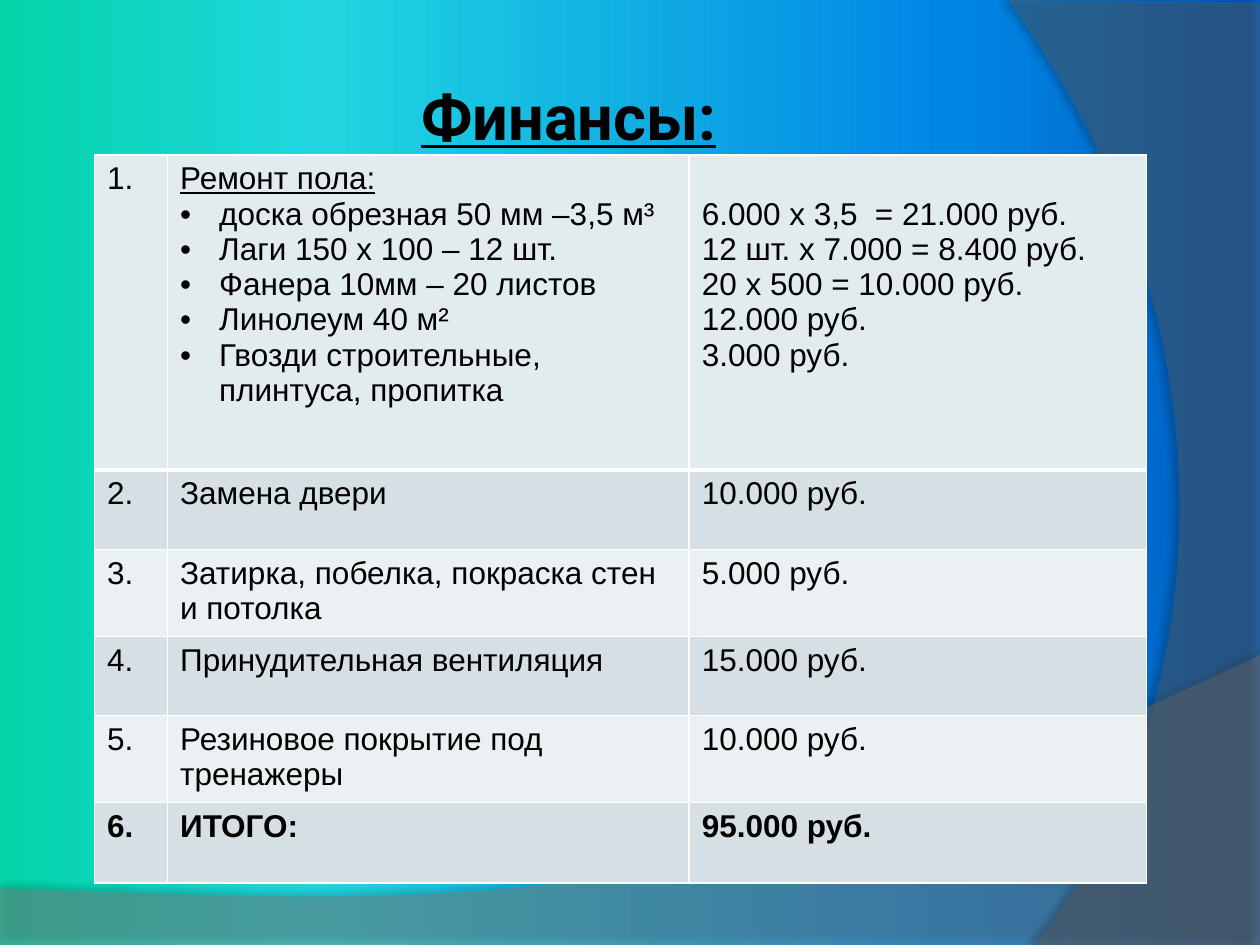
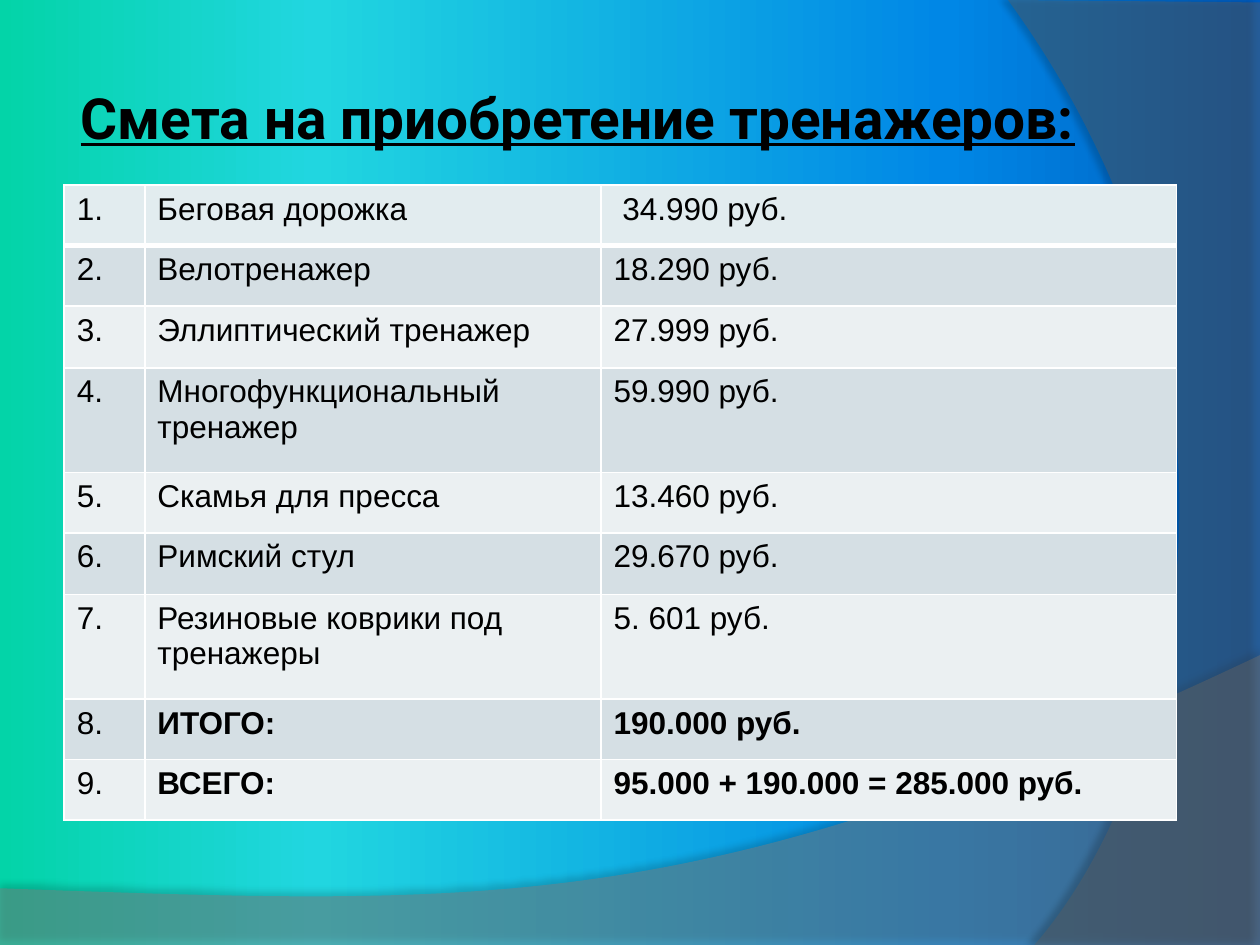
from copy import deepcopy

from lxml.etree import SubElement
from pptx import Presentation
from pptx.dml.color import RGBColor
from pptx.enum.text import MSO_ANCHOR, MSO_AUTO_SIZE, PP_ALIGN
from pptx.oxml.ns import qn
from pptx.util import Inches, Pt

BLACK = RGBColor(0x00, 0x00, 0x00)
WHITE = RGBColor(0xFF, 0xFF, 0xFF)
FIRST_ROW = RGBColor(0xE2, 0xEC, 0xEF)
EVEN_ROW = RGBColor(0xD5, 0xDF, 0xE4)
ODD_ROW = RGBColor(0xEB, 0xF0, 0xF2)
BOTTOM_GRAY = RGBColor(0x7F, 0x7F, 0x7F)
RIGHT_GRAY = RGBColor(0x5E, 0x5E, 0x5E)
GRADIENT = [
    (0, RGBColor(0x03, 0xD4, 0xA8)),
    (0.25, RGBColor(0x21, 0xD6, 0xE0)),
    (0.75, RGBColor(0x00, 0x87, 0xE6)),
    (1, RGBColor(0x00, 0x5C, 0xBF)),
]
TITLE_FONT, BODY_FONT, BODY_SIZE = "Roboto", "Arial", 18
LINE_HEIGHT = 0.28
BULLET_INDENT = 0.31

# Each wave: corner points, then a cubic curve that starts at the last corner.
WAVES = [
    {"color": BOTTOM_GRAY, "opacity": 45,
     "corners": [(0, 7.05), (0, 7.5), (10, 7.5), (10, 5.2)],
     "curve": [(5.59, 7.29), (3.91, 7.19), (0, 7.05)],
     "shadow": {"opacity": 35, "distance": 3.5, "angle": 270}},
    {"color": RIGHT_GRAY, "opacity": 40,
     "corners": [(10, 0.02), (10, 7.5), (8.21, 7.5)],
     "curve": [(9.35, 6.19), (10.18, 3), (8, 0)],
     "shadow": {"opacity": 45, "distance": 4, "angle": 180}},
]

# A row is (work or item, price); a list holds several paragraphs.
ESTIMATES = [
    {
        "title": "Финансы:", "title_size": 36, "title_at": (0.43, 0.29),
        "table_at": (0.75, 1.23), "columns": [0.58, 4.14, 3.63],
        "heights": [2.5, 0.63, 0.69, 0.63, 0.69, 0.64],
        "rows": [
            (["Ремонт пола:", "доска обрезная 50 мм –3,5 м³",
              "Лаги 150 х 100 – 12 шт.", "Фанера 10мм – 20 листов",
              "Линолеум 40 м²", "Гвозди строительные, плинтуса, пропитка"],
             ["6.000 х 3,5  = 21.000 руб.", "12 шт. х 7.000 = 8.400 руб.",
              "20 х 500 = 10.000 руб.", "12.000 руб.", "3.000 руб."]),
            ("Замена двери", "10.000 руб."),
            ("Затирка, побелка, покраска стен и потолка", "5.000 руб."),
            ("Принудительная вентиляция", "15.000 руб."),
            ("Резиновое покрытие под тренажеры", "10.000 руб."),
            ("ИТОГО:", "95.000 руб."),
        ],
        "bold_cells": {(5, 0), (5, 1), (5, 2)},
        "extra_margins": {(0, 2): (0, LINE_HEIGHT)},
    },
    {
        "title": "Смета на приобретение тренажеров:", "title_size": 32.4,
        "title_at": (0.5, 0.3),
        "table_at": (0.51, 1.47), "columns": [0.64, 3.62, 4.57],
        "heights": [0.48, 0.48, 0.49, 0.83, 0.48, 0.49, 0.83, 0.48, 0.48],
        "rows": [
            ("Беговая дорожка", "34.990 руб."),
            ("Велотренажер", "18.290 руб."),
            ("Эллиптический тренажер", "27.999 руб."),
            ("Многофункциональный тренажер", "59.990 руб."),
            ("Скамья для пресса", "13.460 руб."),
            ("Римский стул", "29.670 руб."),
            ("Резиновые коврики под тренажеры", "5. 601 руб."),
            ("ИТОГО:", "190.000 руб."),
            ("ВСЕГО:", "95.000 + 190.000 = 285.000 руб."),
        ],
        "bold_cells": {(7, 1), (7, 2), (8, 1), (8, 2)},
        "extra_margins": {(0, 2): (0.07, 0)},
    },
]


def set_gradient_background(master):
    fill = master.background.fill
    fill.gradient()
    fill.gradient_angle = 0
    stop_list = master.element.find(".//" + qn("a:gsLst"))
    template = deepcopy(stop_list[0])
    for stop in list(stop_list):
        stop_list.remove(stop)
    for _ in GRADIENT:
        stop_list.append(deepcopy(template))
    for stop, (position, color) in zip(fill.gradient_stops, GRADIENT):
        stop.position = position
        stop.color.rgb = color


def add_opacity(color_element, percent):
    SubElement(color_element, qn("a:alpha"), val=str(percent * 1000))


def curve_last_side(shape, curve):
    """Turn the last straight side of a freeform into a cubic curve."""
    last_line = shape.element.findall(".//" + qn("a:lnTo"))[-1]
    last_line.tag = qn("a:cubicBezTo")
    last_line.remove(last_line[0])
    for x, y in curve:
        SubElement(last_line, qn("a:pt"), x=str(Inches(x) - shape.left),
                   y=str(Inches(y) - shape.top))


def add_wave(slide, wave):
    points = [(Inches(x), Inches(y)) for x, y in wave["corners"] + wave["curve"][-1:]]
    builder = slide.shapes.build_freeform(*points[0])
    builder.add_line_segments(points[1:], close=True)
    shape = builder.convert_to_shape()
    curve_last_side(shape, wave["curve"])
    shape.fill.solid()
    shape.fill.fore_color.rgb = wave["color"]
    properties = shape.element.spPr
    add_opacity(properties.find(".//" + qn("a:srgbClr")), wave["opacity"])
    shape.line.fill.background()

    shape.shadow.inherit = False
    shadow = wave["shadow"]
    outer = SubElement(
        properties.find(qn("a:effectLst")), qn("a:outerShdw"),
        blurRad=str(Pt(4)), dist=str(Pt(shadow["distance"])),
        dir=str(shadow["angle"] * 60000), algn="ctr", rotWithShape="0")
    color = SubElement(outer, qn("a:srgbClr"), val=str(BLACK))
    add_opacity(color, shadow["opacity"])
    return shape


def add_waves(slide):
    """Draw the waves behind the title."""
    for index, wave in enumerate(WAVES):
        shape = add_wave(slide, wave)
        slide.shapes.element.insert(2 + index, shape.element)


def add_run(paragraph, text, font_name, size, bold=False, underline=False):
    run = paragraph.add_run()
    run.text = text
    font = run.font
    font.name, font.size = font_name, Pt(size)
    font.bold, font.underline = bold, underline
    font.color.rgb = BLACK


def set_title(slide, estimate):
    title = slide.shapes.title
    left, top = estimate["title_at"]
    title.left, title.top = Inches(left), Inches(top)
    title.width, title.height = Inches(8.17), Inches(1.25)
    frame = title.text_frame
    frame.word_wrap = True
    frame.auto_size = MSO_AUTO_SIZE.NONE
    frame.vertical_anchor = MSO_ANCHOR.MIDDLE
    frame.margin_left = frame.margin_right = Inches(0.05)
    frame.margin_top = frame.margin_bottom = Inches(0.05)
    paragraph = frame.paragraphs[0]
    paragraph.alignment = PP_ALIGN.CENTER
    add_run(paragraph, estimate["title"], TITLE_FONT, estimate["title_size"],
            bold=True, underline=True)


def add_bullet(paragraph):
    properties = paragraph._p.get_or_add_pPr()
    properties.set("marL", str(Inches(BULLET_INDENT)))
    properties.set("indent", str(-Inches(BULLET_INDENT)))
    SubElement(properties, qn("a:buFont"), typeface=BODY_FONT)
    SubElement(properties, qn("a:buChar"), char="•")


def set_borders(cell, row):
    """White lines, with a thick one below the first row."""
    widths = {"lnL": 1, "lnR": 1, "lnT": 3 if row == 1 else 1,
              "lnB": 3 if row == 0 else 1}
    properties = cell._tc.get_or_add_tcPr()
    for index, (side, width) in enumerate(widths.items()):
        line = SubElement(properties, qn("a:" + side), w=str(Pt(width)))
        fill = SubElement(line, qn("a:solidFill"))
        SubElement(fill, qn("a:srgbClr"), val=str(WHITE))
        properties.insert(index, line)


def fill_cell(cell, content, bold, is_work_list):
    texts = content if isinstance(content, list) else [content]
    frame = cell.text_frame
    for index, text in enumerate(texts):
        paragraph = frame.add_paragraph() if index else frame.paragraphs[0]
        if is_work_list and index:
            add_bullet(paragraph)
        add_run(paragraph, text, BODY_FONT, BODY_SIZE, bold,
                underline=is_work_list and index == 0)


def add_estimate_table(slide, estimate):
    rows, columns, heights = (estimate[key] for key in ("rows", "columns", "heights"))
    left, top = estimate["table_at"]
    table = slide.shapes.add_table(
        len(rows), len(columns), Inches(left), Inches(top),
        Inches(sum(columns)), Inches(sum(heights))).table
    table.first_row = table.horz_banding = False
    for column, width in zip(table.columns, columns):
        column.width = Inches(width)
    for row_index, (row, height) in enumerate(zip(rows, heights)):
        table.rows[row_index].height = Inches(height)
        color = EVEN_ROW if row_index % 2 else ODD_ROW if row_index else FIRST_ROW
        for column_index, content in enumerate((f"{row_index + 1}.", *row)):
            position = (row_index, column_index)
            cell = table.cell(*position)
            cell.fill.solid()
            cell.fill.fore_color.rgb = color
            set_borders(cell, row_index)
            extra_left, extra_top = estimate["extra_margins"].get(position, (0, 0))
            cell.margin_left = Inches(0.1 + extra_left)
            cell.margin_top = Inches(0.05 + extra_top)
            is_work_list = column_index == 1 and isinstance(content, list)
            fill_cell(cell, content, position in estimate["bold_cells"], is_work_list)


def main():
    presentation = Presentation()
    presentation.slide_width, presentation.slide_height = Inches(10), Inches(7.5)
    title_only = presentation.slide_layouts.get_by_name("Title Only")
    set_gradient_background(presentation.slide_master)
    for estimate in ESTIMATES:
        slide = presentation.slides.add_slide(title_only)
        add_waves(slide)
        set_title(slide, estimate)
        add_estimate_table(slide, estimate)
    presentation.save("out.pptx")


if __name__ == "__main__":
    main()
